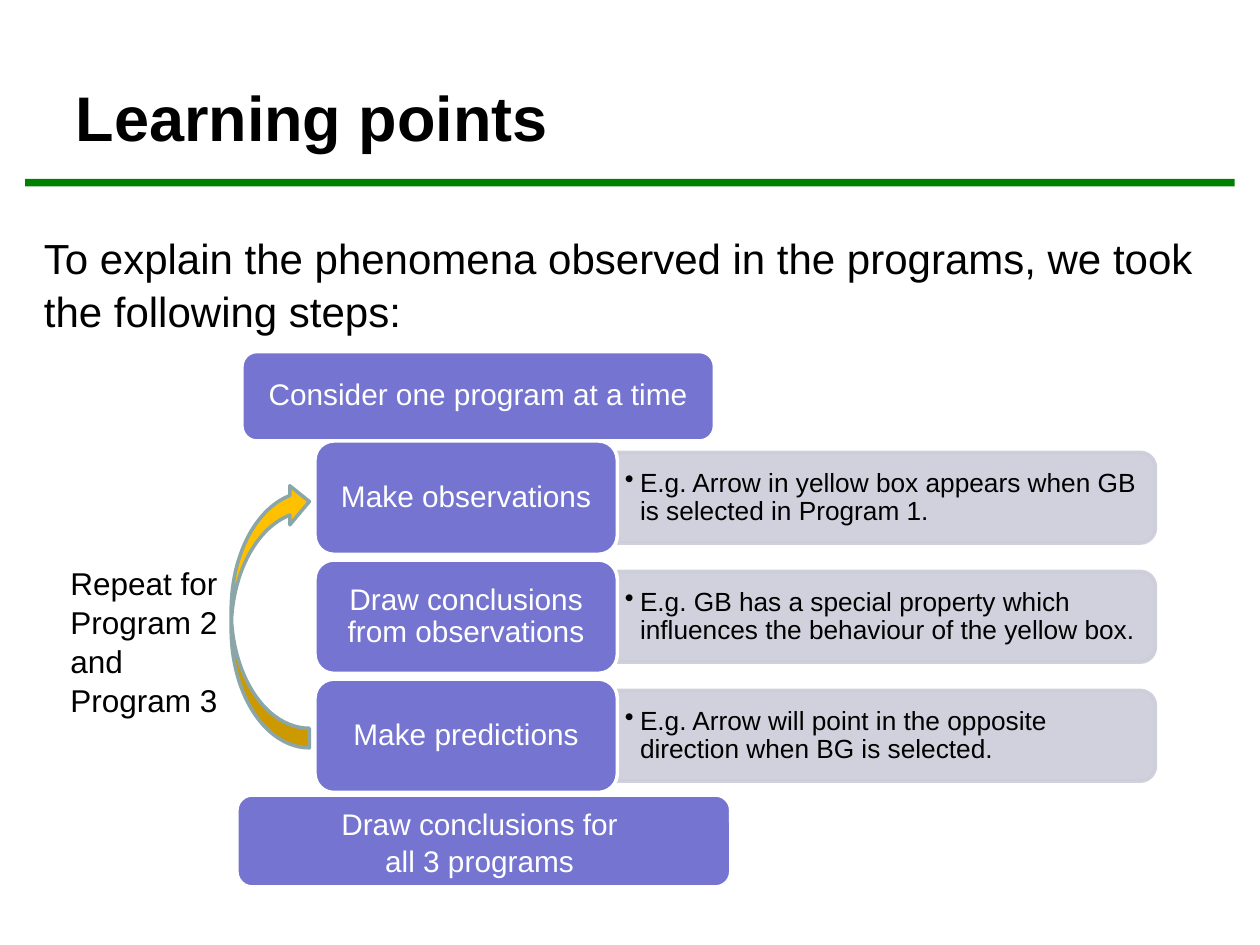
from dataclasses import dataclass

from lxml.etree import SubElement
from pptx import Presentation
from pptx.dml.color import RGBColor
from pptx.enum.shapes import MSO_SHAPE as Shape
from pptx.enum.text import MSO_ANCHOR as Anchor, PP_ALIGN as Align
from pptx.oxml.ns import qn
from pptx.util import Inches, Pt


@dataclass(frozen=True)
class Theme:
    font: str = "Arial"
    black: str = "000000"
    white: str = "FFFFFF"
    green: str = "008000"
    violet: str = "7575D1"
    pale: str = "CDCDDA"
    amber: str = "FFC000"
    teal: str = "8AA6A8"
    title: int = 36
    intro: int = 24
    note: int = 18
    label: int = 17
    example: int = 15
    line: int = 2


THEME = Theme()

STEPS = [
    ("Make observations",
     "E.g. Arrow in yellow box appears when GB is selected in Program 1."),
    ("Draw conclusions from observations",
     "E.g. GB has a special property which influences the behaviour of the yellow box."),
    ("Make predictions",
     "E.g. Arrow will point in the opposite direction when BG is selected."),
]
STEP_TOP, STEP_PITCH, STEP_HEIGHT = 3.5, 0.945, 0.9
STEP_LEFT, STEP_WIDTH = 2.5, 2.4
BAR_LENGTH, BAR_HEIGHT = 4.27, 0.72


def write(shape, text, size, color=THEME.black, bold=False, align=Align.LEFT,
          anchor=Anchor.TOP, margins=(0.1, 0.05)):
    """Fill a shape with one paragraph and return it."""
    frame = shape.text_frame
    frame.word_wrap = True
    frame.vertical_anchor = anchor
    frame.margin_left = frame.margin_right = Inches(margins[0])
    frame.margin_top = frame.margin_bottom = Inches(margins[1])
    frame.text = text
    para = frame.paragraphs[0]
    para.alignment = align
    para.font.name = THEME.font
    para.font.size = Pt(size)
    para.font.bold = bold
    para.font.color.rgb = RGBColor.from_string(color)
    return para


def add_text(page, area, text, size, **style):
    box = page.shapes.add_textbox(*map(Inches, area))
    return write(box, text, size, **style)


def add_figure(page, kind, area, fill, line=None):
    figure = page.shapes.add_shape(kind, *map(Inches, area))
    figure.shadow.inherit = False
    figure.fill.solid()
    figure.fill.fore_color.rgb = RGBColor.from_string(fill)
    if line:
        figure.line.color.rgb = RGBColor.from_string(line)
        figure.line.width = Pt(THEME.line)
    else:
        figure.line.fill.background()
    return figure


def add_label_box(page, area, text, line_spacing=0.9):
    box = add_figure(page, Shape.ROUNDED_RECTANGLE, area, THEME.violet, THEME.white)
    para = write(box, text, THEME.label, color=THEME.white, align=Align.CENTER,
                 anchor=Anchor.MIDDLE, margins=(0.11, 0.05))
    para.line_spacing = line_spacing


def make_translucent(figure, percent):
    for color in figure.element.spPr.iter(qn("a:srgbClr")):
        SubElement(color, qn("a:alpha"), val=str(percent * 1000))


def add_bullet(para, indent):
    properties = para._p.get_or_add_pPr()
    properties.set("marL", str(Inches(indent)))
    properties.set("indent", str(-Inches(indent)))
    bullet = properties.makeelement(qn("a:buChar"), {"char": "•"})
    properties.insert_element_before(bullet, "a:tabLst", "a:defRPr", "a:extLst")


def add_step(page, top, name, example):
    """A step box with its example bar to the right."""
    middle = top + STEP_HEIGHT / 2
    right = STEP_LEFT + STEP_WIDTH

    # The bar is a tall shape turned on its side
    bar_area = (right + (BAR_LENGTH - BAR_HEIGHT) / 2, middle - BAR_LENGTH / 2,
                BAR_HEIGHT, BAR_LENGTH)
    bar = add_figure(page, Shape.ROUND_2_SAME_RECTANGLE, bar_area, THEME.pale, THEME.pale)
    bar.rotation = 90
    make_translucent(bar, 90)

    para = add_text(page, (right, middle - 0.325, 4.23, 0.65), example, THEME.example,
                    anchor=Anchor.MIDDLE, margins=(0.06, 0.03))
    add_bullet(para, 0.12)
    para.line_spacing = 0.9

    add_label_box(page, (STEP_LEFT, top, STEP_WIDTH, STEP_HEIGHT), name)


def add_title(page, text):
    title = page.shapes.title
    title.left, title.top, title.width, title.height = map(Inches, (0.5, 0.3, 9, 1.25))
    write(title, text, THEME.title, bold=True, anchor=Anchor.MIDDLE)


def main():
    deck = Presentation()
    deck.slide_width, deck.slide_height = Inches(10), Inches(7.5)
    page = deck.slides.add_slide(deck.slide_layouts[5])

    # Heading and introduction
    add_figure(page, Shape.RECTANGLE, (0.2, 1.42, 9.6, 0.06), THEME.green)
    add_title(page, "Learning points")
    intro = add_text(page, (0.25, 1.78, 9.49, 0.95),
                     "To explain the phenomena observed in the programs, "
                     "we took the following steps:", THEME.intro)
    intro.line_spacing = 1.05

    # First and last boxes
    add_label_box(page, (1.92, 2.79, 3.75, 0.71), "Consider one program at a time")
    add_label_box(page, (1.88, 6.31, 3.92, 0.73),
                  "Draw conclusions for \vall 3 programs ", line_spacing=1.05)

    # Repeat loop
    loop = add_figure(page, Shape.CURVED_DOWN_ARROW, (1.09, 4.57, 2.11, 0.62),
                      THEME.amber, THEME.teal)
    loop.rotation = 270
    repeat = add_text(page, (0.46, 4.42, 1.42, 1.31),
                      "Repeat for Program 2 and Program 3", THEME.note)
    repeat.line_spacing = 1.03

    # Repeated steps with examples
    for index, (name, example) in enumerate(STEPS):
        add_step(page, STEP_TOP + index * STEP_PITCH, name, example)

    deck.save("out.pptx")


if __name__ == "__main__":
    main()
